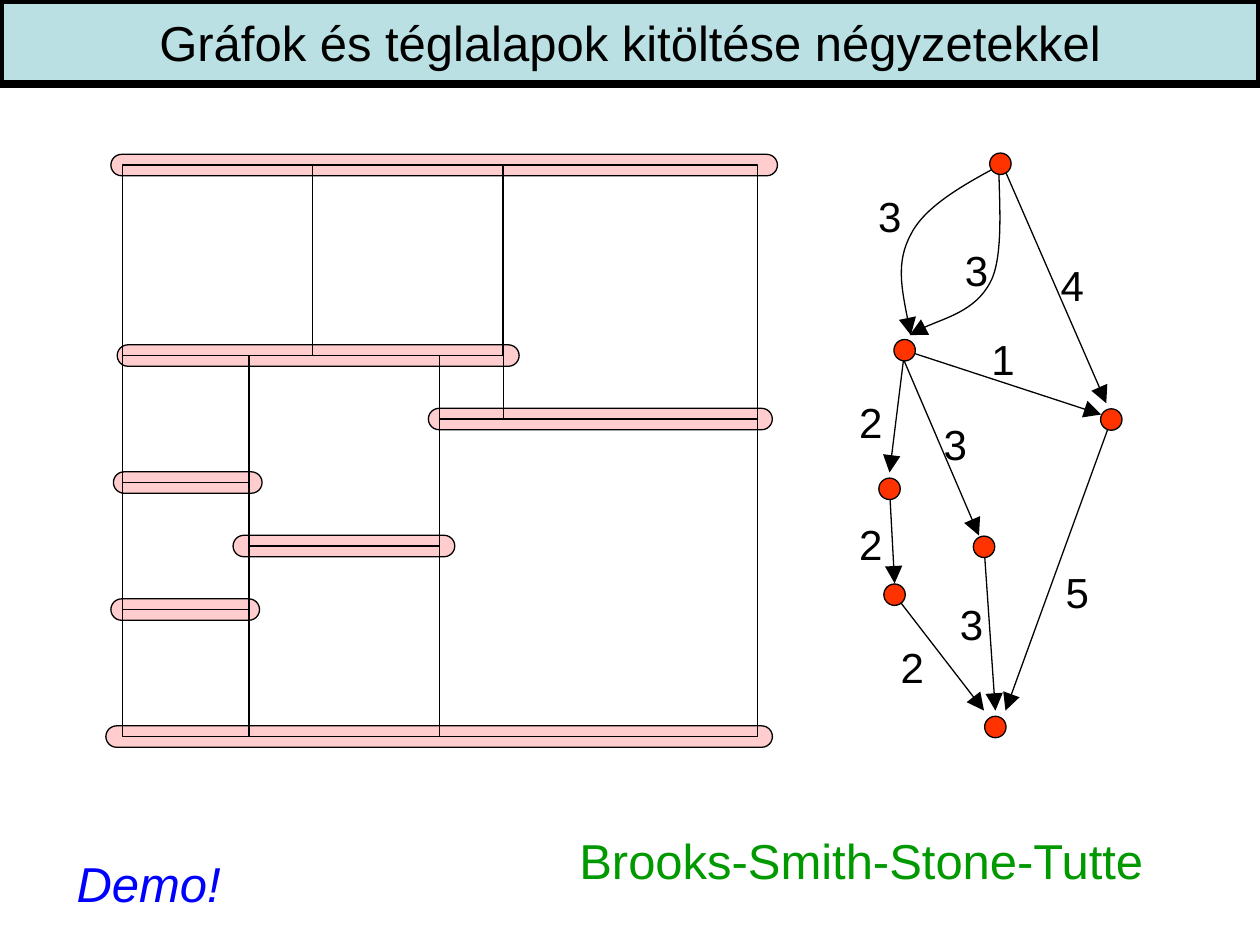
from lxml.etree import SubElement
from pptx import Presentation
from pptx.dml.color import RGBColor
from pptx.enum.shapes import MSO_CONNECTOR as Conn, MSO_SHAPE as Kind
from pptx.enum.text import MSO_ANCHOR as Anchor, MSO_AUTO_SIZE as Fit, PP_ALIGN as Align
from pptx.oxml.ns import qn
from pptx.util import Inches, Pt

THEME = dict(font="Arial", ink="000000", band="BBE0E3", bar="FFCDCD", node="FF3300",
             demo="0000FF", names="009900", big=28, small=24, thin=0.75, thick=4.5)

TITLE = "Gráfok és téglalapok kitöltése négyzetekkel"

# Squares of the tiling: column, row and side in grid units
LEFT, TOP, UNIT = 0.97, 1.31, 0.504
SQUARES = [(0, 0, 3), (3, 0, 3), (6, 0, 4), (5, 4, 5), (5, 3, 1),
           (0, 3, 2), (0, 7, 2), (2, 6, 3), (0, 5, 2)]

# Bars along the horizontal edges: grid row, left, width
BARS = [(5, 0.9, 1.18), (6, 1.85, 1.76), (7, 0.88, 1.18), (9, 0.84, 5.29),
        (4, 3.4, 2.73), (3, 0.93, 3.19), (0, 0.88, 5.29)]

# Graph: node centres, straight edges (start, end), curved edges (Bezier points)
DOT = 0.17
NODES = [(7.18, 2.78), (8.82, 3.33), (7.06, 3.88), (7.81, 4.34),
         (7.1, 4.72), (7.9, 5.77), (7.94, 1.3)]
EDGES = [((8.82, 3.33), (7.98, 5.64)), ((7.1, 4.72), (7.81, 5.64)),
         ((7.81, 4.34), (7.9, 5.64)), ((7.14, 2.78), (7.77, 4.25)),
         ((7.18, 2.78), (7.06, 3.75)), ((7.06, 3.88), (7.1, 4.63)),
         ((7.18, 2.78), (8.74, 3.29)), ((7.94, 1.27), (8.78, 3.2))]
CURVES = [[(7.94, 1.31), (7.64, 1.47), (7.34, 1.64), (7.23, 1.86),
           (7.11, 2.08), (7.17, 2.37), (7.23, 2.66)],
          [(7.93, 1.31), (7.92, 1.47), (7.98, 2.02), (7.86, 2.24),
           (7.74, 2.47), (7.35, 2.57), (7.22, 2.66)]]
WEIGHTS = [("3", 6.87, 1.14), ("3", 7.56, 1.57), ("3", 7.39, 2.95), ("3", 7.52, 4.38),
           ("2", 6.72, 2.78), ("2", 6.72, 3.75), ("2", 7.05, 4.72),
           ("5", 8.36, 4.13), ("4", 8.32, 1.69), ("1", 7.77, 2.28)]


def rgb(name):
    return RGBColor.from_string(THEME[name])


def box(*sides):
    return [Inches(side) for side in sides]


def stroke(line, width="thin"):
    line.color.rgb = rgb("ink")
    line.width = Pt(THEME[width])


def paint(shape, fill=None, width="thin"):
    if fill:
        shape.fill.solid()
        shape.fill.fore_color.rgb = rgb(fill)
    else:
        shape.fill.background()
    stroke(shape.line, width)


def draw(slide, kind, place, fill=None):
    shape = slide.shapes.add_shape(kind, *box(*place))
    shape.shadow.inherit = False
    paint(shape, fill)
    return shape


def tip(shape):
    """End the shape's line in a large triangle."""
    SubElement(shape.line._get_or_add_ln(), qn("a:tailEnd"),
               type="triangle", w="lg", len="lg")


def arrow(slide, start, end):
    line = slide.shapes.add_connector(Conn.STRAIGHT, *box(*start, *end))
    stroke(line.line)
    tip(line)
    SubElement(line._element.spPr, qn("a:effectLst"))


def curve(slide, points):
    """Draw a curved arrow: a polyline whose segments, by threes, become Beziers."""
    first, *rest = [box(*point) for point in points]
    build = slide.shapes.build_freeform(*first)
    build.add_line_segments(rest, close=False)
    shape = build.convert_to_shape()
    shape.shadow.inherit = False
    paint(shape)
    tip(shape)
    route = next(shape._element.iter(qn("a:path")))
    steps = route.findall(qn("a:lnTo"))
    for i in range(0, len(steps), 3):
        bend = SubElement(route, qn("a:cubicBezTo"))
        for step in steps[i:i + 3]:
            bend.append(step[0])
            route.remove(step)


def write(frame, text, size="big", color="ink", italic=None, align=None, space=None):
    para = frame.paragraphs[0]
    para.alignment = align
    para.line_spacing = space
    run = para.add_run()
    run.text = text
    font = run.font
    font.name, font.size, font.italic = THEME["font"], Pt(THEME[size]), italic
    font.color.rgb = rgb(color)


def label(slide, text, place, **style):
    frame = slide.shapes.add_textbox(*box(*place)).text_frame
    frame.word_wrap = False
    frame.auto_size = Fit.SHAPE_TO_FIT_TEXT
    write(frame, text, **style)


def head(slide):
    title = slide.shapes.title
    title.left, title.top, title.width, title.height = box(0, 0, 10, 0.67)
    paint(title, "band", "thick")
    title.text_frame.vertical_anchor = Anchor.MIDDLE
    title.text_frame.auto_size = Fit.NONE
    write(title.text_frame, TITLE, align=Align.CENTER)


def tiling(slide):
    for row, left, width in BARS:
        bar = draw(slide, Kind.ROUNDED_RECTANGLE,
                   (left, TOP + row * UNIT - DOT / 2, width, DOT), "bar")
        bar.adjustments[0] = 0.5
    for col, row, side in SQUARES:
        draw(slide, Kind.RECTANGLE,
             (LEFT + col * UNIT, TOP + row * UNIT, side * UNIT, side * UNIT))


def graph(slide):
    for start, end in EDGES:
        arrow(slide, start, end)
    for points in CURVES:
        curve(slide, points)
    for x, y in NODES:
        draw(slide, Kind.OVAL, (x - DOT / 2, y - DOT / 2, DOT, DOT), "node")
    for text, left, top in WEIGHTS:
        label(slide, text, (left, top, 0.39, 0.82), size="small", space=1.8)


def main():
    deck = Presentation()
    deck.slide_width, deck.slide_height = box(10, 7.5)
    slide = deck.slides.add_slide(deck.slide_layouts[5])
    head(slide)
    tiling(slide)
    graph(slide)
    label(slide, "Demo!", (0.51, 6.35, 1.36, 0.83), color="demo", italic=True, space=1.8)
    label(slide, "Brooks-Smith-Stone-Tutte", (4.5, 6.54, 4.73, 0.57), color="names")
    deck.save("out.pptx")


if __name__ == "__main__":
    main()
